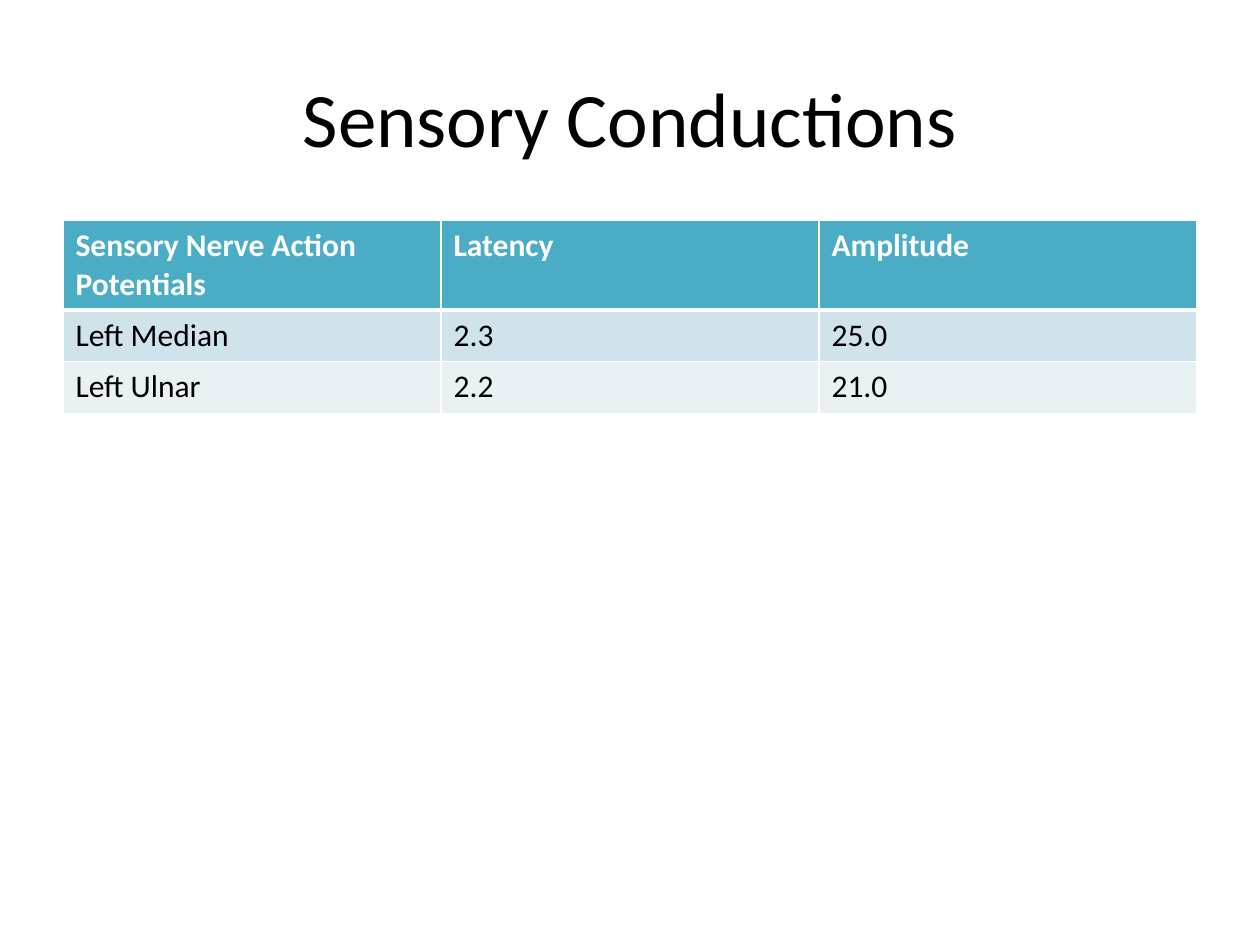
"""Build the sensory conductions slide with its table of nerve action potentials."""
import pptx
import pptx.dml.color
import pptx.enum.text
import pptx.oxml
import pptx.oxml.ns
import pptx.util

Inches = pptx.util.Inches
COLORS = {
    "text": "000000",
    "header_text": "FFFFFF",
    "border": "FFFFFF",
    "header": "4BACC6",
    "odd_row": "D0E3EA",
    "even_row": "E9F1F5",
}
CONDUCTIONS = [
    ["Sensory Nerve Action Potentials", "Latency", "Amplitude"],
    ["Left Median", "2.3", "25.0"],
    ["Left Ulnar", "2.2", "21.0"],
]


class SlideBuilder:
    """Hold the font and the current slide, and add styled elements to it."""

    def __init__(self, slide, font_name):
        self.slide = slide
        self.font_name = font_name

    def style(self, paragraph, size, color, bold=False):
        """Format a whole paragraph."""
        font = paragraph.font
        font.name = self.font_name
        font.size = pptx.util.Pt(size)
        font.bold = bold
        font.color.rgb = pptx.dml.color.RGBColor.from_string(COLORS[color])

    def title(self, text, left, top, width, height):
        """Place and fill the title placeholder."""
        title = self.slide.shapes.title
        title.left, title.top = Inches(left), Inches(top)
        title.width, title.height = Inches(width), Inches(height)
        title.text_frame.text = text
        title.text_frame.vertical_anchor = pptx.enum.text.MSO_ANCHOR.MIDDLE
        paragraph = title.text_frame.paragraphs[0]
        paragraph.alignment = pptx.enum.text.PP_ALIGN.CENTER
        self.style(paragraph, 44, "text")

    def borders(self, cell, widths):
        """Draw the cell borders, given a width in points for each side."""
        properties = cell._tc.get_or_add_tcPr()
        for side, width in widths.items():
            properties.append(pptx.oxml.parse_xml(
                f'<a:ln{side} {pptx.oxml.ns.nsdecls("a")} w="{pptx.util.Pt(width)}">'
                f'<a:solidFill><a:srgbClr val="{COLORS["border"]}"/></a:solidFill>'
                f'</a:ln{side}>'))

    def table(self, rows, left, top, width, row_heights):
        """Add a table with a header row and banded body rows."""
        frame = self.slide.shapes.add_table(
            len(rows), len(rows[0]), Inches(left), Inches(top),
            Inches(width), Inches(sum(row_heights)))
        table = frame.table
        for row, height in zip(table.rows, row_heights):
            row.height = Inches(height)
        for row_index, texts in enumerate(rows):
            is_header = row_index == 0
            band = "odd_row" if row_index % 2 else "even_row"
            fill = "header" if is_header else band
            widths = {"L": 1, "R": 1,
                      "T": 3 if row_index == 1 else 1,
                      "B": 3 if is_header else 1}
            for column_index, text in enumerate(texts):
                cell = table.cell(row_index, column_index)
                cell.text = text
                self.borders(cell, widths)
                cell.fill.solid()
                cell.fill.fore_color.rgb = pptx.dml.color.RGBColor.from_string(COLORS[fill])
                self.style(cell.text_frame.paragraphs[0], 18,
                           "header_text" if is_header else "text", is_header)


def main():
    """Create and save the presentation."""
    presentation = pptx.Presentation()
    presentation.slide_width = Inches(10)
    presentation.slide_height = Inches(7.5)
    slide = presentation.slides.add_slide(presentation.slide_layouts[5])
    builder = SlideBuilder(slide, "Calibri")
    builder.title("Sensory Conductions", 0.5, 0.3, 9, 1.25)
    builder.table(CONDUCTIONS, 0.5, 1.75, 9, [0.7, 0.41, 0.41])
    presentation.save("out.pptx")


if __name__ == "__main__":
    main()
